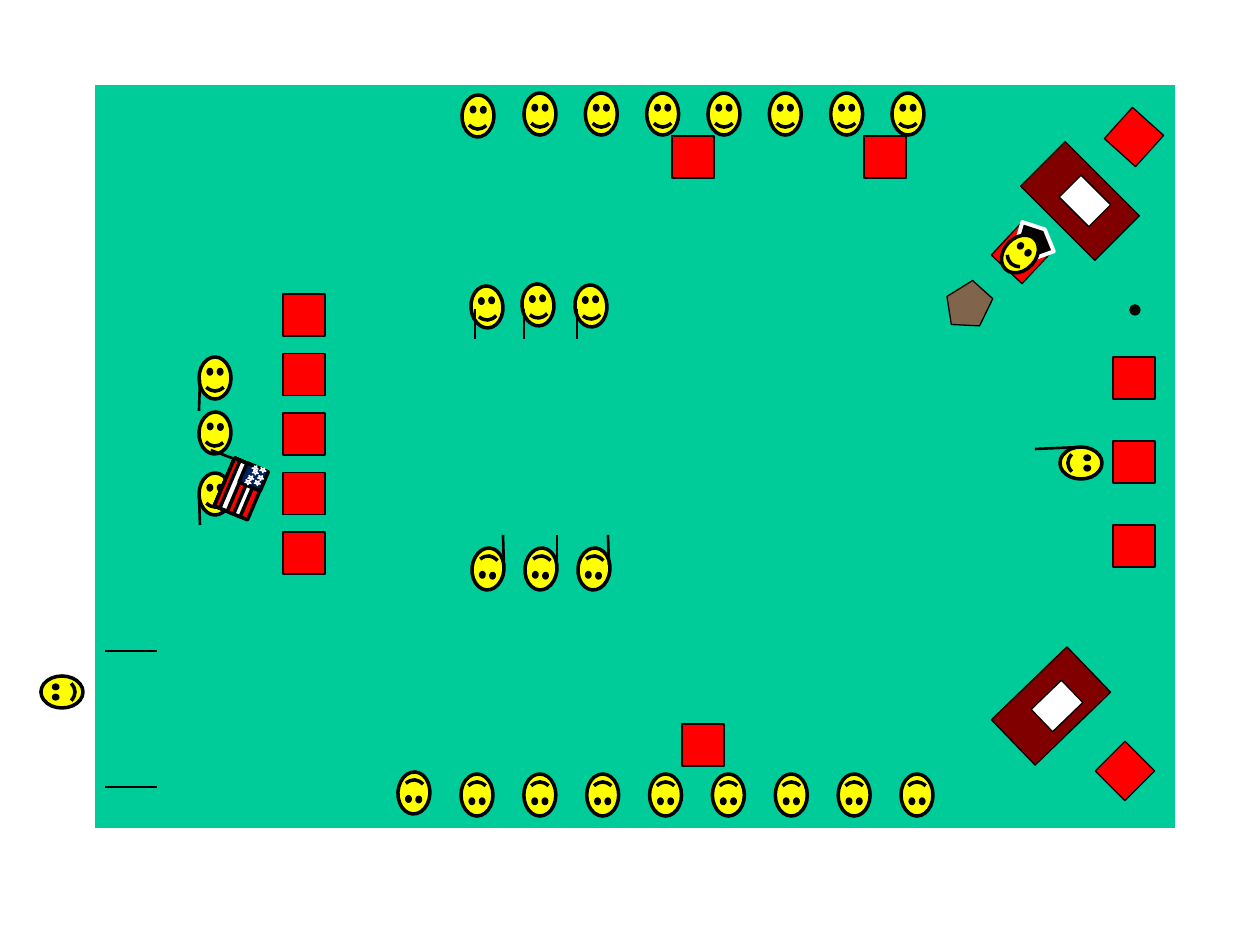
import math

import pptx
import pptx.util
from lxml import etree
from pptx.dml.color import RGBColor
from pptx.enum.shapes import MSO_CONNECTOR, MSO_SHAPE
from pptx.oxml.ns import qn

EMU_PER_PX = 914400 // 126
BLACK, WHITE, RED, YELLOW = "000000", "FFFFFF", "FF0000", "FFFF00"
MAROON, GREEN, NAVY = "800000", "00CC99", "002060"

# Everything is placed by its centre: x, y, then rotation in degrees.
LEFT_CHAIRS = [(304, 315 + 59.5 * i, 0) for i in range(5)]
RIGHT_CHAIRS = [(1134, 378 + 84 * i, 0) for i in range(3)]
WALL_CHAIRS = [(703, 745, 0), (693, 157, 0), (885, 157, 0)]
CORNER_CHAIRS = [(1134, 137, 42), (1125, 771, 45), (1021, 254, 43)]

DESKS = [((1080, 201), (1085, 201), 45), ((1051, 706), (1057, 706), 136)]

BOTTOM_ROW = [(477 + 440 * i / 7, 795, 180) for i in range(8)]
TOP_ROW = [(540 + 368 * i / 6, 114, 0) for i in range(7)]
ROW_ENDS = [(478, 116, 2), (414, 793, 183)]
DOOR_AND_FRONT = [(62, 692, 270), (1081, 463, 90)]
BACK_GUARDS = [(215, 494, 0), (215, 378, 0)]
UPPER_GUARDS = [(487, 307, 356), (538, 305, 356), (591, 306, 356)]
LOWER_GUARDS = [(488 + 53 * i, 569, 185) for i in range(3)]
FLAG_BEARER = (215, 433, 3)
MASTER = (1020, 254, 43)

DOOR_LINES = [(105, 651, 157, 651), (105, 787, 157, 787)]
STAFFS = [
    (199, 495, 200, 525), (200, 380, 199, 411), (1082, 447, 1035, 449),
    (577, 309, 577, 339), (524, 309, 524, 339), (475, 309, 475, 339),
    (504, 565, 503, 535), (557, 565, 557, 535), (609, 565, 608, 535),
]

# Flag parts are measured along and across the flag from its centre.
FLAG_CENTRE, FLAG_ANGLE, FLAG_LENGTH = (241, 489), 113, 52
STRIPES = [(36, RED), (28, WHITE), (21, RED), (14, WHITE), (6, RED)]
STARS = [(-26, -13), (-18, -14), (-12, -13), (-21, -7), (-14, -5), (-9, -4), (-25, -5)]
POLE = [(-24, 43), (-26, -3)]

presentation = pptx.Presentation()
presentation.slide_width = pptx.util.Inches(10)
presentation.slide_height = pptx.util.Inches(7.5)
slide = presentation.slides.add_slide(presentation.slide_layouts[6])


def px(value):
    return round(value * EMU_PER_PX)


def color(hex_string):
    return RGBColor.from_string(hex_string)


def add_shape(kind, center, size, fill, line=BLACK, line_width=0.75, rotation=0, alpha=None):
    (x, y), (width, height) = center, size
    shape = slide.shapes.add_shape(
        kind, px(x - width / 2), px(y - height / 2), px(width), px(height))
    shape.rotation = rotation
    shape.shadow.inherit = False
    shape.fill.solid()
    shape.fill.fore_color.rgb = color(fill)
    if alpha:
        fill_color = shape.fill._xPr.find(qn("a:solidFill"))[0]
        etree.SubElement(fill_color, qn("a:alpha")).set("val", str(alpha * 1000))
    shape.line.color.rgb = color(line)
    shape.line.width = pptx.util.Pt(line_width)


def add_line(x1, y1, x2, y2, width):
    line = slide.shapes.add_connector(
        MSO_CONNECTOR.STRAIGHT, px(x1), px(y1), px(x2), px(y2))
    line.line.color.rgb = color(BLACK)
    line.line.width = pptx.util.Pt(width)
    etree.SubElement(line._element.spPr, qn("a:effectLst"))


def add_chair(x, y, rotation):
    add_shape(MSO_SHAPE.RECTANGLE, (x, y), (42, 42), RED, rotation=rotation)


def add_face(x, y, rotation):
    add_shape(MSO_SHAPE.SMILEY_FACE, (x, y), (32, 42), YELLOW,
              line_width=2, rotation=rotation)


def flag_point(along, across):
    """Slide position of a point given in the flag's own turned axes."""
    angle = math.radians(FLAG_ANGLE)
    return (FLAG_CENTRE[0] + along * math.cos(angle) - across * math.sin(angle),
            FLAG_CENTRE[1] + along * math.sin(angle) + across * math.cos(angle))


def add_flag():
    for height, fill in STRIPES:
        add_shape(MSO_SHAPE.RECTANGLE, flag_point(0, (STRIPES[0][0] - height) / 2),
                  (FLAG_LENGTH, height), fill, line_width=2, rotation=FLAG_ANGLE)
    add_shape(MSO_SHAPE.RECTANGLE, flag_point(-16, -7), (21, 23), NAVY,
              line_width=2, rotation=FLAG_ANGLE)
    for star in STARS:
        add_shape(MSO_SHAPE.STAR_5_POINT, flag_point(*star), (5, 6), WHITE,
                  line=WHITE, rotation=FLAG_ANGLE, alpha=50)
    add_line(*flag_point(*POLE[0]), *flag_point(*POLE[1]), 1.5)


add_shape(MSO_SHAPE.RECTANGLE, (635, 457), (1081, 745), GREEN, line=WHITE, line_width=1)
for desk, paper, rotation in DESKS:
    add_shape(MSO_SHAPE.RECTANGLE, desk, (105, 63), MAROON, rotation=rotation)
    add_shape(MSO_SHAPE.RECTANGLE, paper, (42, 31), WHITE, rotation=rotation)
for chair in LEFT_CHAIRS + RIGHT_CHAIRS + WALL_CHAIRS + CORNER_CHAIRS:
    add_chair(*chair)
for door_line in DOOR_LINES:
    add_line(*door_line, 0.75)
add_shape(MSO_SHAPE.REGULAR_PENTAGON, (967, 307), (44, 47), RED, rotation=222, alpha=50)

for face in (BOTTOM_ROW + TOP_ROW + ROW_ENDS + DOOR_AND_FRONT
             + BACK_GUARDS + UPPER_GUARDS + LOWER_GUARDS):
    add_face(*face)
add_shape(MSO_SHAPE.REGULAR_PENTAGON, (1036, 239), (43, 26), BLACK,
          line=WHITE, line_width=2.25, rotation=43)
add_face(*MASTER)
for staff in STAFFS:
    add_line(*staff, 1.5)
add_face(*FLAG_BEARER)
add_flag()
add_shape(MSO_SHAPE.FLOWCHART_CONNECTOR, (1135, 310), (10, 10), BLACK)

presentation.save("out.pptx")
